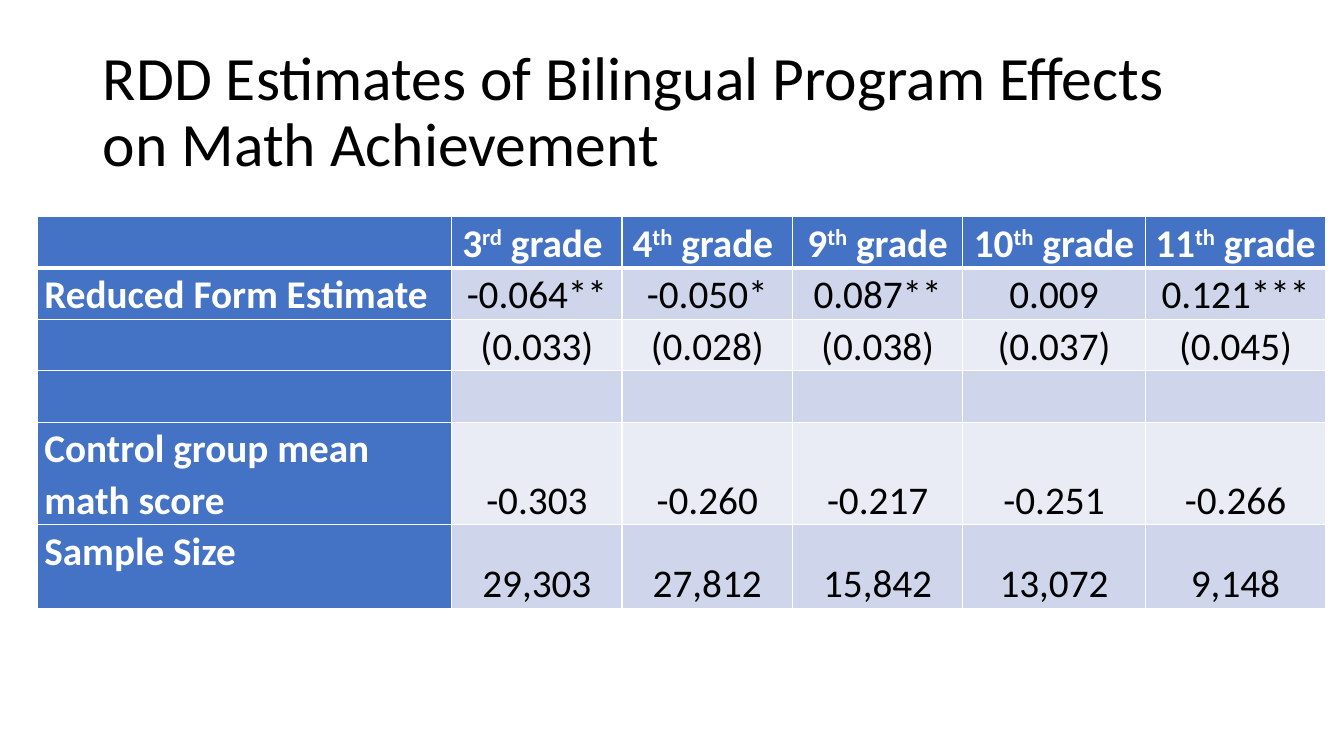
import pptx
import pptx.util
import pptx.dml.color
import pptx.enum.text
import pptx.oxml
import pptx.oxml.ns

TITLE = "RDD Estimates of Bilingual Program Effects on Math Achievement"
GRADES = [("3", "rd", " grade "), ("4", "th", " grade "), ("9", "th", " grade"),
          ("10", "th", " grade"), ("11", "th", " grade")]
ROWS = [
    ("Reduced Form Estimate", "-0.064**", "-0.050*", "0.087**", "0.009", "0.121***"),
    ("", "(0.033)", "(0.028)", "(0.038)", "(0.037)", "(0.045)"),
    ("",) * 6,
    ("Control group mean math score", "-0.303", "-0.260", "-0.217", "-0.251", "-0.266"),
    ("Sample Size", "29,303", "27,812", "15,842", "13,072", "9,148"),
]
COL_WIDTHS = [4.11, 1.69, 1.69, 1.69, 1.81, 1.79]
ROW_HEIGHTS = [0.51, 0.51, 0.51, 0.51, 1.01, 0.83]
BLUE, WHITE, BLACK = "4472C4", "FFFFFF", "000000"
BANDS = ["CFD5EA", "E9EBF5"]

Inches, Pt = pptx.util.Inches, pptx.util.Pt
ALIGN, ANCHOR = pptx.enum.text.PP_ALIGN, pptx.enum.text.MSO_ANCHOR


def rgb(value):
    return pptx.dml.color.RGBColor.from_string(value)


def write(tf, parts, size=28, color=BLACK, bold=False, align=ALIGN.LEFT, spacing=1.07):
    p = tf.paragraphs[0]
    p.alignment = align
    p.line_spacing = spacing
    for i, text in enumerate(parts):
        r = p.add_run()
        r.text = text
        r.font.name = "Calibri"
        r.font.size = Pt(size)
        r.font.bold = bold
        r.font.color.rgb = rgb(color)
        if i == 1:
            r.font._element.set("baseline", "30000")


def set_borders(cell, **widths):
    tc_pr = cell._tc.get_or_add_tcPr()
    for i, side in enumerate("LRTB"):
        width = Pt(widths.get(side, 1))
        tc_pr.insert(i, pptx.oxml.parse_xml(
            f'<a:ln{side} {pptx.oxml.ns.nsdecls("a")} w="{width}"><a:solidFill>'
            f'<a:srgbClr val="{WHITE}"/></a:solidFill></a:ln{side}>'))


prs = pptx.Presentation()
prs.slide_width, prs.slide_height = Inches(13.33), Inches(7.5)
s = prs.slides.add_slide(prs.slide_layouts[5])

title = s.shapes.title
title.left, title.top = Inches(0.92), Inches(0.4)
title.width, title.height = Inches(11.5), Inches(1.45)
tf = title.text_frame
tf.word_wrap = True
tf.auto_size = pptx.enum.text.MSO_AUTO_SIZE.NONE
tf.vertical_anchor = ANCHOR.MIDDLE
write(tf, [TITLE], size=44, spacing=0.9)

grid = [[()] + GRADES] + [[(text,) if text else () for text in row] for row in ROWS]
table = s.shapes.add_table(len(grid), len(COL_WIDTHS), Inches(0.37), Inches(2.15),
                           Inches(sum(COL_WIDTHS)), Inches(sum(ROW_HEIGHTS))).table
for column, width in zip(table.columns, COL_WIDTHS):
    column.width = Inches(width)
for row, height in zip(table.rows, ROW_HEIGHTS):
    row.height = Inches(height)

for y, row in enumerate(grid):
    for x, parts in enumerate(row):
        cell = table.cell(y, x)
        heading = y == 0 or x == 0
        cell.margin_left = cell.margin_right = Inches(0.07)
        cell.margin_top = cell.margin_bottom = 0
        cell.vertical_anchor = ANCHOR.TOP if heading else ANCHOR.BOTTOM
        cell.fill.solid()
        cell.fill.fore_color.rgb = rgb(BLUE if heading else BANDS[(y - 1) % 2])
        set_borders(cell, T=3 if y == 1 else 1, B=3 if y == 0 else 1)
        write(cell.text_frame, parts, color=WHITE if heading else BLACK, bold=heading,
              align=ALIGN.CENTER if x else ALIGN.LEFT)

prs.save("out.pptx")
